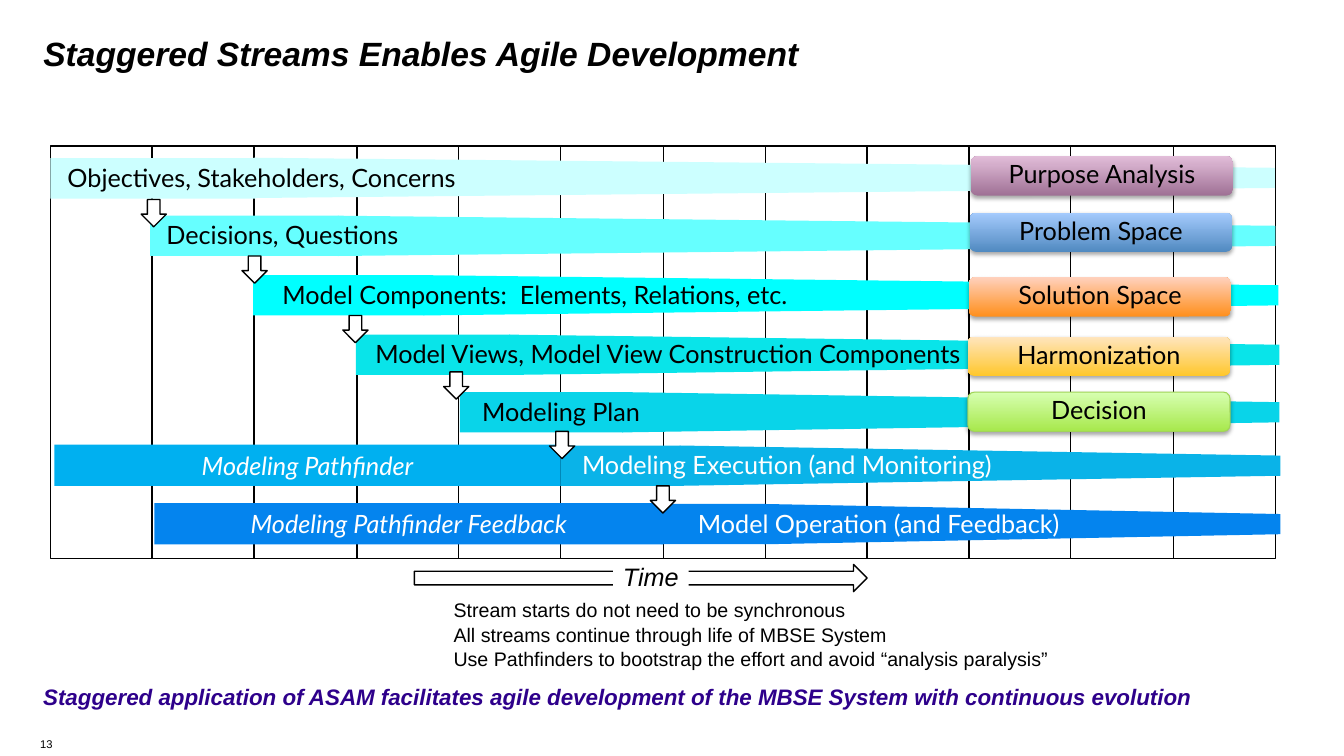
from lxml import etree
from pptx import Presentation
from pptx import util as u
from pptx.dml.color import RGBColor
from pptx.enum import shapes, text
from pptx.oxml import ns

PX = 9144  # EMU per px, 100 px to the inch
SHAPE, ALIGN, ANCHOR = shapes.MSO_SHAPE, text.PP_ALIGN, text.MSO_ANCHOR
BLACK = RGBColor(0, 0, 0)
WHITE = RGBColor(255, 255, 255)
INDIGO = RGBColor(0x2E, 0x00, 0x8B)
PATHFINDER_BLUE = RGBColor(0x00, 0xB0, 0xF0)
FEEDBACK_BLUE = RGBColor(0x04, 0x84, 0xEE)
DECISION_EDGE = RGBColor(0xA1, 0xD4, 0x59)

BAND_HEIGHT = 40
# left, top, start of taper, right, colour, label, label left, label width, label colour
STREAMS = [
    (50, 157, 252, 1265, RGBColor(0xCC, 0xFF, 0xFF),
     "Objectives, Stakeholders, Concerns", 1, 517, BLACK),
    (149, 214, 335, 1265, RGBColor(0x66, 0xFF, 0xFF),
     "Decisions, Questions", 104, 352, BLACK),
    (251, 273, 420, 1268, RGBColor(0x00, 0xFF, 0xFF),
     "Model Components:  Elements, Relations, etc.", 210, 641, BLACK),
    (353, 332, 505, 1269, RGBColor(0x09, 0xE4, 0xE9),
     "Model Views, Model View Construction Components", 316, 693, BLACK),
    (456, 389, 617, 1269, RGBColor(0x09, 0xD4, 0xE9),
     "Modeling Plan", 456, 201, BLACK),
    (556, 442, 674, 1270, RGBColor(0x0A, 0xB3, 0xE8),
     "Modeling Execution (and Monitoring)", 527, 507, WHITE),
    (656, 500, 758, 1270, FEEDBACK_BLUE,
     "Model Operation (and Feedback)", 632, 479, WHITE),
]
# left, top, bottom colour, top colour, label
PHASES = [
    (963, 155, RGBColor(0xA0, 0x72, 0x96), RGBColor(0xE2, 0xBD, 0xD9), "Purpose Analysis"),
    (962, 211, RGBColor(0x51, 0x8A, 0xC1), RGBColor(0xA5, 0xCB, 0xFD), "Problem Space"),
    (961, 275, RGBColor(0xFF, 0x8F, 0x1C), RGBColor(0xFF, 0xD1, 0xBD), "Solution Space"),
    (960, 334, RGBColor(0xFF, 0xC7, 0x2C), RGBColor(0xFF, 0xE5, 0xBE), "Harmonization"),
    (960, 389, RGBColor(0xA7, 0xE8, 0x4C), RGBColor(0xD7, 0xFF, 0xB1), "Decision"),
]
PATHFINDERS = [
    (54, 441, 502, PATHFINDER_BLUE, "Modeling Pathfinder"),
    (153, 499, 505, FEEDBACK_BLUE, "Modeling Pathfinder Feedback"),
]
HANDOFFS = [(140, 198), (240, 254), (340, 313), (440, 369), (545, 428), (645, 482)]
NOTES = [
    "Stream starts do not need to be synchronous",
    "All streams continue through life of MBSE System",
    "Use Pathfinders to bootstrap the effort and avoid “analysis paralysis”",
]


def write(shape, content, size, font="Arial", color=BLACK, bold=False, italic=False,
          align=ALIGN.LEFT, anchor=ANCHOR.TOP):
    frame = shape.text_frame
    frame.text = content
    frame.word_wrap = True
    frame.vertical_anchor = anchor
    for paragraph in frame.paragraphs:
        paragraph.alignment = align
        for run in paragraph.runs:
            run.font.name, run.font.size = font, u.Pt(size)
            run.font.bold, run.font.italic = bold, italic
            run.font.color.rgb = color
    return frame


def write_label(shape, content, color=BLACK, italic=False):
    write(shape, content, 18, "Lato", color, italic=italic,
          align=ALIGN.CENTER, anchor=ANCHOR.MIDDLE)


def add_box(slide, left, top, width, height):
    return slide.shapes.add_textbox(left * PX, top * PX, width * PX, height * PX)


def add_flat(slide, preset, left, top, width, height, fill=WHITE, line=None):
    shape = slide.shapes.add_shape(preset, left * PX, top * PX, width * PX, height * PX)
    shape.shadow.inherit = False
    shape.fill.solid()
    shape.fill.fore_color.rgb = fill
    if line is None:
        shape.line.fill.background()
    else:
        shape.line.color.rgb = line
        shape.line.width = u.Pt(1)
    return shape


def add_title(slide, left, top, width, height):
    title = slide.shapes.title
    title.left, title.top, title.width, title.height = (
        n * PX for n in (left, top, width, height))
    frame = write(title, "Staggered Streams Enables Agile Development", 24,
                  bold=True, italic=True)
    frame.margin_top = 8 * PX


def add_time_grid(slide, left, top, width, height, periods=12):
    for i in range(periods):
        start, end = (left + round(n * width / periods) for n in (i, i + 1))
        add_flat(slide, SHAPE.RECTANGLE, start, top, end - start, height, line=BLACK)


def add_stream(slide, left, top, taper, right, color, label, label_left, label_width,
               label_color):
    """A band of even height that narrows to half from taper to right."""
    length = right - taper
    # The trapezoid is turned about its centre, so its upright box is narrow and tall.
    tail = add_flat(slide, SHAPE.TRAPEZOID, (taper + right - BAND_HEIGHT) // 2,
                    top + (BAND_HEIGHT - length) // 2, BAND_HEIGHT, length, color)
    tail.rotation = 90
    tail.adjustments[0] = 0.25
    add_flat(slide, SHAPE.RECTANGLE, left, top, taper - left + 1, BAND_HEIGHT, color)
    write_label(add_box(slide, label_left, top - 1, label_width, BAND_HEIGHT),
                label, label_color)


def add_drop_shadow(shape):
    properties = shape.element.spPr
    for effects in properties.findall(ns.qn("a:effectLst")):
        properties.remove(effects)
    effects = etree.SubElement(properties, ns.qn("a:effectLst"))
    shadow = etree.SubElement(effects, ns.qn("a:outerShdw"), blurRad="40000",
                              dist="23000", dir="5400000", rotWithShape="0")
    black = etree.SubElement(shadow, ns.qn("a:srgbClr"), val="000000")
    etree.SubElement(black, ns.qn("a:alpha"), val="35000")


def add_phase(slide, left, top, bottom_color, top_color, label):
    phase = add_flat(slide, SHAPE.ROUNDED_RECTANGLE, left, top, 260, 39)
    phase.fill.gradient()
    phase.fill.gradient_angle = 90
    for stop, color in zip(phase.fill.gradient_stops, (bottom_color, top_color)):
        stop.color.rgb = color
    if label == "Decision":
        phase.line.color.rgb = DECISION_EDGE
        phase.line.width = u.Pt(0.75)
    add_drop_shadow(phase)
    write_label(phase, label)
    phase.text_frame.margin_top = 0
    phase.text_frame.margin_bottom = 4 * PX


def add_time_axis(slide, left, top, width, height):
    add_flat(slide, SHAPE.RIGHT_ARROW, left, top, width, height, line=BLACK)
    caption = add_flat(slide, SHAPE.RECTANGLE, left + 197, top - 8, 75, 40)
    write(caption, "Time", 18, italic=True, align=ALIGN.CENTER, anchor=ANCHOR.MIDDLE)


def add_closing_text(slide):
    notes = write(add_box(slide, 440, 587, 640, 81), "\n".join(NOTES), 14)
    for paragraph in notes.paragraphs:
        paragraph.line_spacing = 1.05
    write(add_box(slide, 33, 673, 1236, 49),
          "Staggered application of ASAM facilitates agile development of the MBSE System "
          "with continuous evolution", 16, color=INDIGO, bold=True, italic=True)
    write(add_box(slide, 30, 726, 101, 24), "13", 8, anchor=ANCHOR.MIDDLE)


def main():
    deck = Presentation()
    deck.slide_width, deck.slide_height = 1333 * PX, 750 * PX
    slide = deck.slides.add_slide(deck.slide_layouts[5])
    add_title(slide, 33, 25, 1153, 64)
    add_time_axis(slide, 411, 560, 449, 27)
    add_closing_text(slide)
    add_time_grid(slide, 50, 145, 1215, 409)
    for stream in STREAMS:
        add_stream(slide, *stream)
    for phase in PHASES:
        add_phase(slide, *phase)
    for left, top, width, color, label in PATHFINDERS:
        band = add_flat(slide, SHAPE.RECTANGLE, left, top, width, 41, color)
        write_label(band, label, WHITE, italic=True)
    for left, top in HANDOFFS:
        add_flat(slide, SHAPE.DOWN_ARROW, left, top, 25, 27, line=BLACK)
    deck.save("out.pptx")


if __name__ == "__main__":
    main()
